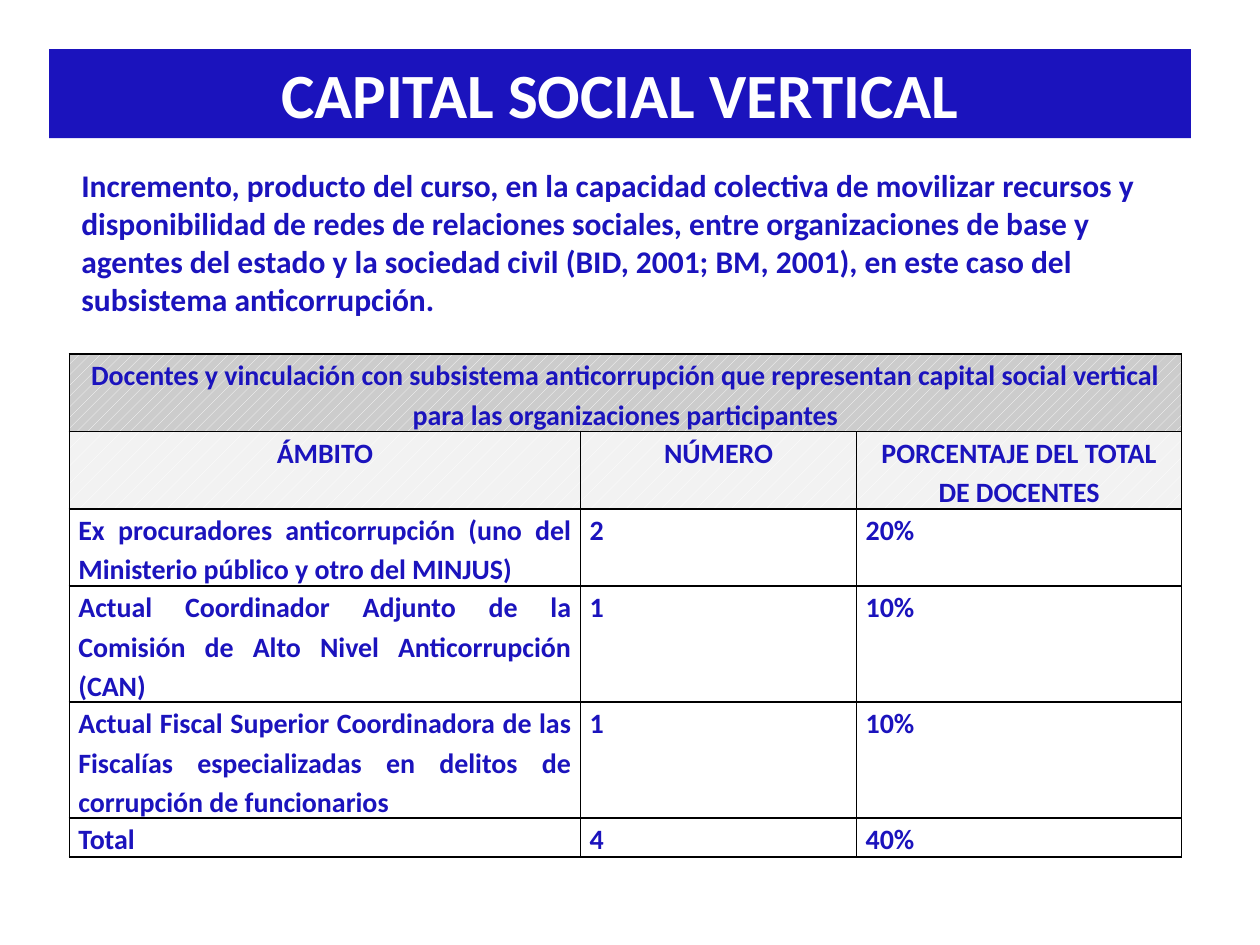
from lxml.etree import SubElement
from pptx import Presentation
from pptx.dml.color import RGBColor as Rgb
from pptx.enum.dml import MSO_PATTERN as Pattern
from pptx.enum.shapes import MSO_SHAPE as Shape
from pptx.enum.text import MSO_ANCHOR as Anchor, PP_ALIGN as Align
from pptx.oxml.ns import qn
from pptx.util import Pt

COLORS = {"blue": "1B13BD", "white": "FFFFFF", "black": "000000",
          "gray": "CCCCCC", "pale": "F2F2F2"}
LINE_HEIGHT = 22.1  # one table line, in points


def rgb(name):
    return Rgb.from_string(COLORS[name])


class SlideBuilder:
    font = {"name": "Calibri", "bold": True}
    cell_format = {"margin_left": Pt(5.2), "margin_right": Pt(5.2),
                   "margin_top": 0, "margin_bottom": 0,
                   "vertical_anchor": Anchor.TOP}

    def __init__(self, slide):
        self.slide = slide

    def apply(self, target, values):
        for key, value in values.items():
            setattr(target, key, value)

    def add_words(self, frame, words, size, color="blue", **paragraph_format):
        paragraph = frame.paragraphs[0]
        self.apply(paragraph, paragraph_format)
        run = paragraph.add_run()
        run.text = words
        self.apply(run.font, {**self.font, "size": Pt(size)})
        run.font.color.rgb = rgb(color)

    def banner(self, box, words, size):
        banner = self.slide.shapes.add_shape(Shape.RECTANGLE, *map(Pt, box))
        banner.shadow.inherit = False
        banner.fill.solid()
        banner.fill.fore_color.rgb = rgb("blue")
        banner.line.fill.background()
        banner.text_frame.word_wrap = True
        self.add_words(banner.text_frame, words, size, "white",
                       alignment=Align.CENTER)

    def text(self, box, words, size):
        frame = self.slide.shapes.add_textbox(*map(Pt, box)).text_frame
        frame.word_wrap = True
        self.add_words(frame, words, size, alignment=Align.LEFT)

    def borders(self, cell):
        properties = cell._tc.get_or_add_tcPr()
        for side in ("lnL", "lnR", "lnT", "lnB"):
            line = SubElement(properties, qn(f"a:{side}"), w=str(Pt(1)))
            fill = SubElement(line, qn("a:solidFill"))
            SubElement(fill, qn("a:srgbClr"), val=COLORS["black"])

    def fill_cell(self, cell, pattern, back):
        if pattern is None:
            cell.fill.background()
            return
        cell.fill.patterned()
        cell.fill.pattern = pattern
        cell.fill.fore_color.rgb = rgb("white")
        cell.fill.back_color.rgb = rgb(back)

    def table(self, left, top, widths, line_counts, rows, size):
        heights = [LINE_HEIGHT * count for count in line_counts]
        table = self.slide.shapes.add_table(
            len(rows), len(widths), Pt(left), Pt(top),
            Pt(sum(widths)), Pt(sum(heights))).table
        self.apply(table, {"first_row": False, "horz_banding": False})
        for column, width in zip(table.columns, widths):
            column.width = Pt(width)
        for row, height in zip(table.rows, heights):
            row.height = Pt(height)

        # The first row is the table title, the second the column heads
        head_styles = [(Pattern.PERCENT_20, "gray"), (Pattern.PERCENT_5, "pale")]
        for r, entries in enumerate(rows):
            is_head = r < len(head_styles)
            pattern, back = head_styles[r] if is_head else (None, None)
            for c in range(len(widths)):
                cell = table.cell(r, c)
                self.apply(cell, self.cell_format)
                self.borders(cell)
                self.fill_cell(cell, pattern, back)
                if c < len(entries):
                    self.add_words(
                        cell.text_frame, entries[c], size, line_spacing=1.15,
                        alignment=Align.CENTER if is_head else Align.JUSTIFY)
        table.cell(0, 0).merge(table.cell(0, len(widths) - 1))


def main():
    deck = Presentation()
    deck.slide_width, deck.slide_height = Pt(720), Pt(540)
    builder = SlideBuilder(deck.slides.add_slide(deck.slide_layouts[6]))

    # Title
    builder.banner((28, 28, 652.5, 51), "CAPITAL SOCIAL VERTICAL", 36)

    # Definition
    builder.text(
        (39.4, 91.5, 646.5, 94.3),
        "Incremento, producto del curso, en la capacidad colectiva de movilizar "
        "recursos y disponibilidad de redes de relaciones sociales, entre "
        "organizaciones de base y agentes del estado y la sociedad civil "
        "(BID, 2001; BM, 2001), en este caso del subsistema anticorrupción.", 18)

    # Teachers by field
    rows = [
        ("Docentes y vinculación con subsistema anticorrupción que representan "
         "capital social vertical para las organizaciones participantes",),
        ("ÁMBITO", "NÚMERO", "PORCENTAJE DEL TOTAL DE DOCENTES"),
        ("Ex procuradores anticorrupción (uno del Ministerio público y otro del "
         "MINJUS)", "2", "20%"),
        ("Actual Coordinador Adjunto de la Comisión de Alto Nivel Anticorrupción "
         "(CAN)", "1", "10%"),
        ("Actual Fiscal Superior Coordinadora de las Fiscalías especializadas en "
         "delitos de corrupción de funcionarios", "1", "10%"),
        ("Total", "4", "40%"),
    ]
    builder.table(39.6, 202.4, (292.2, 157.7, 185.7), (2, 2, 2, 3, 3, 1), rows, 16)

    deck.save("out.pptx")


if __name__ == "__main__":
    main()
